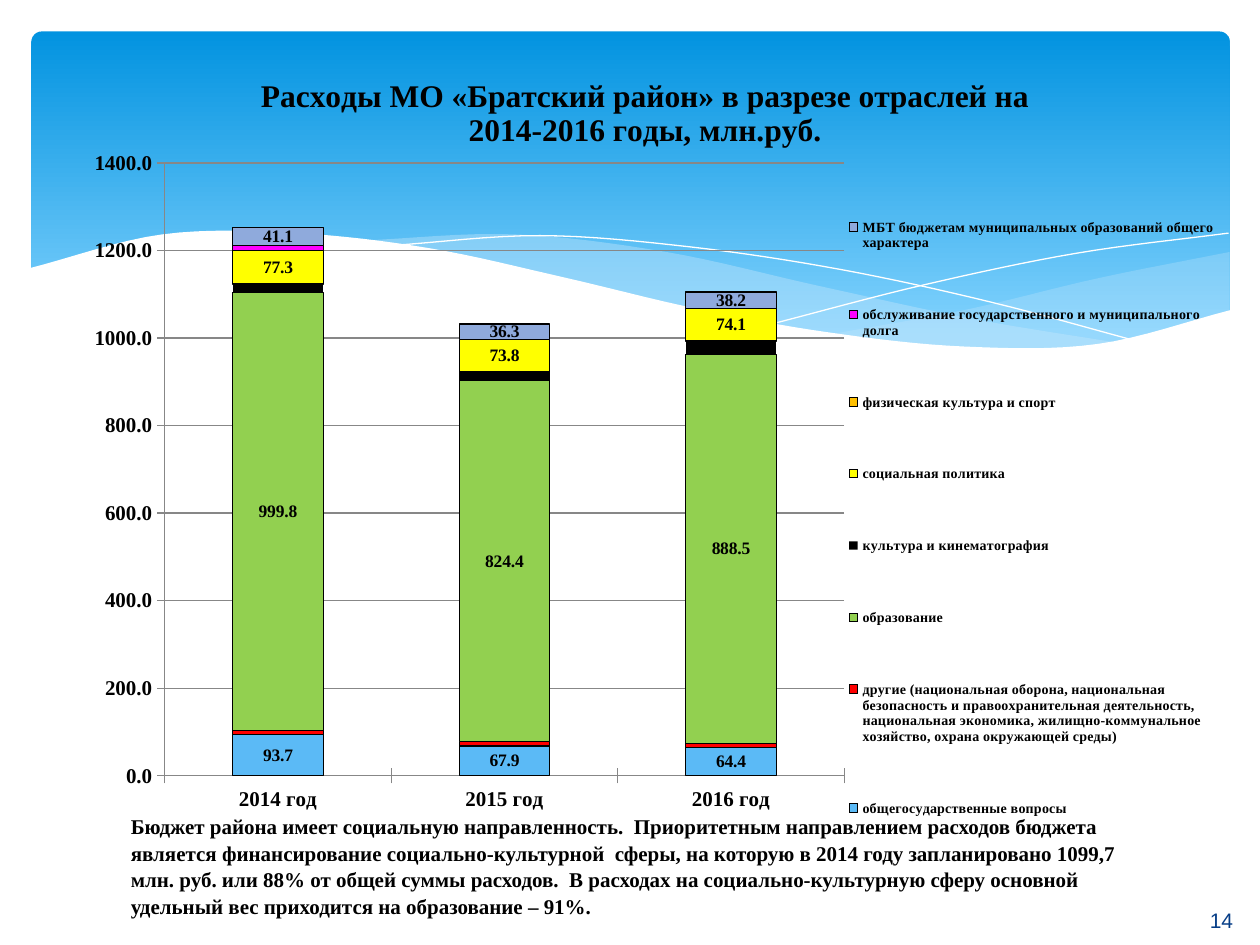
from dataclasses import dataclass

from lxml import etree
from pptx import Presentation
from pptx.chart.data import CategoryChartData
from pptx.dml.color import RGBColor
from pptx.enum.chart import XL_CHART_TYPE, XL_LEGEND_POSITION, XL_TICK_MARK
from pptx.enum.shapes import MSO_SHAPE
from pptx.enum.text import MSO_ANCHOR, PP_ALIGN
from pptx.oxml import parse_xml
from pptx.oxml.ns import nsdecls, qn
from pptx.util import Inches, Pt

STACKED = XL_CHART_TYPE.COLUMN_STACKED
RIGHT = XL_LEGEND_POSITION.RIGHT
CROSS = XL_TICK_MARK.CROSS
ROUNDED = MSO_SHAPE.ROUNDED_RECTANGLE
MIDDLE = MSO_ANCHOR.MIDDLE
LEFT, CENTER = PP_ALIGN.LEFT, PP_ALIGN.CENTER


@dataclass(frozen=True)
class Theme:
    serif: str = "Times New Roman"
    sans: str = "Arial"
    base: str = "Calibri"
    sky_top: str = "0293E0"
    sky_bottom: str = "83D3FE"
    mist: str = "C6E7FC"
    white: str = "FFFFFF"
    ink: str = "000000"
    number: str = "073E87"
    grid: str = "878787"
    title_size: int = 18
    text_size: int = 12
    label_size: int = 10
    legend_size: int = 8


THEME = Theme()


def style_font(font, size, color=THEME.ink, name=THEME.serif, bold=True):
    for attribute, value in {"size": Pt(size), "name": name, "bold": bold}.items():
        setattr(font, attribute, value)
    font.color.rgb = RGBColor.from_string(color)


def manual_layout(target="", **fractions):
    """Chart layout element; x, y, w and h are fractions of the chart area."""
    inner = f'<c:layoutTarget val="{target}"/>' if target else ""
    inner += '<c:xMode val="edge"/><c:yMode val="edge"/>'
    inner += "".join(f'<c:{tag} val="{value}"/>' for tag, value in fractions.items())
    return parse_xml(f'<c:layout {nsdecls("c")}><c:manualLayout>{inner}'
                     "</c:manualLayout></c:layout>")


prs = Presentation()
prs.slide_width, prs.slide_height = Inches(10), Inches(7.5)
slide = prs.slides.add_slide(prs.slide_layouts[6])

# Sky band
sky = slide.shapes.add_shape(ROUNDED, Inches(0.25), Inches(0.25), Inches(9.51), Inches(2.7))
sky.adjustments[0] = 0.03
sky.shadow.inherit = False
sky.line.fill.background()
sky.fill.gradient()
sky.fill.gradient_angle = 270
for stop, color, position in zip(sky.fill.gradient_stops,
                                 (THEME.sky_top, THEME.sky_bottom), (0, 0.9)):
    stop.color.rgb = RGBColor.from_string(color)
    stop.position = position

# Waves: fill (None = outline only), opacity in percent, and edges.
# An edge is its first x, last x and the heights at equal steps between them.
WAVES = [
    (THEME.mist, 29, [(9.76, 6.61, (2, 2.21, 2.46, 2.65)),
                      (6.61, 9.76, (2.65, 2.77, 2.74, 2.47))]),
    (THEME.mist, 40, [(8.93, 2.86, (2.73, 2.53, 2.27, 2, 1.86, 1.91)),
                      (2.86, 8.93, (1.91, 2.12, 2.4, 2.64, 2.78, 2.73))]),
    (None, 100, [(3.09, 9.07, (1.95, 1.87, 1.96, 2.14, 2.4, 2.72))]),
    (None, 100, [(6.13, 9.75, (2.57, 2.26, 2.01, 1.85))]),
    (THEME.white, 100, [(9.77, 0.23, (2.46, 2.73, 2.75, 2.64, 2.45, 2.2, 1.97, 1.85,
                                      1.86, 2.13)),
                        (0.23, 9.77, (3.29, 3.29))]),
]
SMOOTHING = 8
for color, opacity, edges in WAVES:
    outline = []
    for start, end, heights in edges:
        # Catmull-Rom curve, with the end slopes continued past both ends
        spans = len(heights) - 1
        y = [2 * heights[0] - heights[1], *heights, 2 * heights[-1] - heights[-2]]
        for step in range(spans * SMOOTHING + 1):
            span = min(step // SMOOTHING, spans - 1)
            t = step / SMOOTHING - span
            a, b, c, d = y[span:span + 4]
            height = b + t / 2 * (c - a + t * (2 * a - 5 * b + 4 * c - d
                                               + t * (3 * b - a - 3 * c + d)))
            across = start + (end - start) * step / (spans * SMOOTHING)
            outline.append((Inches(across), Inches(height)))
    builder = slide.shapes.build_freeform(*outline[0])
    builder.add_line_segments(outline[1:], close=color is not None)
    wave = builder.convert_to_shape()
    wave.shadow.inherit = False
    if color is None:
        wave.fill.background()
        wave.line.color.rgb = RGBColor.from_string(THEME.white)
        wave.line.width = Pt(0)
        continue
    wave.line.fill.background()
    wave.fill.solid()
    wave.fill.fore_color.rgb = RGBColor.from_string(color)
    if opacity < 100:
        tint = wave._element.spPr.find(qn("a:solidFill"))[0]
        etree.SubElement(tint, qn("a:alpha"), val=str(opacity * 1000))

# Spending by sector: name, values, colour, outlined, labelled
SECTORS = [
    ("общегосударственные вопросы", (93.7, 67.9, 64.4), "5BBAF6", True, True),
    ("другие (национальная оборона, национальная безопасность и правоохранительная "
     "деятельность, национальная экономика, жилищно-коммунальное хозяйство, охрана "
     "окружающей среды)", (10, 10, 10), "FF0000", True, False),
    ("образование", (999.8, 824.4, 888.5), "92D050", True, True),
    ("культура и кинематография", (20, 20, 30), "000000", False, False),
    ("социальная политика", (77.3, 73.8, 74.1), "FFFF00", True, True),
    ("физическая культура и спорт", (0, None, None), "FFC000", True, False),
    ("обслуживание государственного и муниципального долга", (10, 0, 0),
     "FF00FF", True, False),
    ("МБТ бюджетам муниципальных образований общего характера", (41.1, 36.3, 38.2),
     "8FAADC", True, True),
]
spending = CategoryChartData(number_format="0.0")
spending.categories = [f"{year} год" for year in range(2014, 2017)]
for name, values, *_ in SECTORS:
    spending.add_series(name, values)
chart = slide.shapes.add_chart(STACKED, Inches(0.47), Inches(0.39), Inches(9.3),
                               Inches(6.95), spending).chart
style_font(chart.font, THEME.label_size, name=THEME.base, bold=False)

heading = chart.chart_title.text_frame
heading.text = "Расходы МО «Братский район» в разрезе отраслей на\n2014-2016 годы, млн.руб."
for line in heading.paragraphs:
    style_font(line.runs[0].font, THEME.title_size)
chart.chart_title.include_in_layout = False
chart.chart_title._element.find(qn("c:tx")).addnext(manual_layout(x=0.1, y=0.03))

plot = chart.plots[0]
plot.overlap, plot.gap_width, plot.vary_by_categories = 100, 150, False
for series, (_, _, color, outlined, labelled) in zip(plot.series, SECTORS):
    series.format.fill.solid()
    series.format.fill.fore_color.rgb = RGBColor.from_string(color)
    if outlined:
        series.format.line.color.rgb = RGBColor.from_string(THEME.ink)
        series.format.line.width = Pt(0.75)
    if labelled:
        labels = series.data_labels
        for attribute, value in {"show_value": True, "number_format": "0.0",
                                 "number_format_is_linked": False}.items():
            setattr(labels, attribute, value)
        style_font(labels.font, THEME.label_size)

amounts = chart.value_axis
amounts.minimum_scale, amounts.maximum_scale, amounts.major_unit = 0, 1400, 200
amounts.tick_labels.number_format = "0.0"
amounts.tick_labels.number_format_is_linked = False
for axis in (chart.category_axis, amounts):
    axis.major_tick_mark = CROSS
    style_font(axis.tick_labels.font, THEME.text_size)
    axis.format.line.color.rgb = RGBColor.from_string(THEME.grid)
amounts.major_gridlines.format.line.color.rgb = RGBColor.from_string(THEME.grid)

chart.has_legend = True
chart.legend.position = RIGHT
chart.legend.include_in_layout = False
style_font(chart.legend.font, THEME.legend_size)
chart.legend._element.find(qn("c:legendPos")).addnext(
    manual_layout(x=0.67, y=0.13, w=0.32, h=0.81))

plot_area = chart._chartSpace.chart.plotArea
for automatic in plot_area.findall(qn("c:layout")):
    plot_area.remove(automatic)
plot_area.insert(0, manual_layout("inner", x=0.09, y=0.13, w=0.58, h=0.7))

# Page number and commentary
COMMENTARY = (
    "Бюджет района имеет социальную направленность.  Приоритетным направлением расходов "
    "бюджета является финансирование социально-культурной  сферы, на которую в 2014 году "
    "запланировано 1099,7 млн. руб. или 88% от общей суммы расходов.  В расходах на "
    "социально-культурную сферу основной удельный вес приходится на образование – 91%.")
TEXTS = [
    ("14", (9.06, 7.1, 1.27, 0.4), CENTER, 1.0, (THEME.number, THEME.sans, False)),
    (COMMENTARY, (0.94, 6.48, 8.06, 0.78), LEFT, 1.05, (THEME.ink, THEME.serif, True)),
]
for text, place, alignment, spacing, look in TEXTS:
    frame = slide.shapes.add_textbox(*map(Inches, place)).text_frame
    frame.word_wrap, frame.vertical_anchor = True, MIDDLE
    paragraph = frame.paragraphs[0]
    paragraph.text, paragraph.alignment, paragraph.line_spacing = text, alignment, spacing
    style_font(paragraph.runs[0].font, THEME.text_size, *look)

prs.save("out.pptx")
